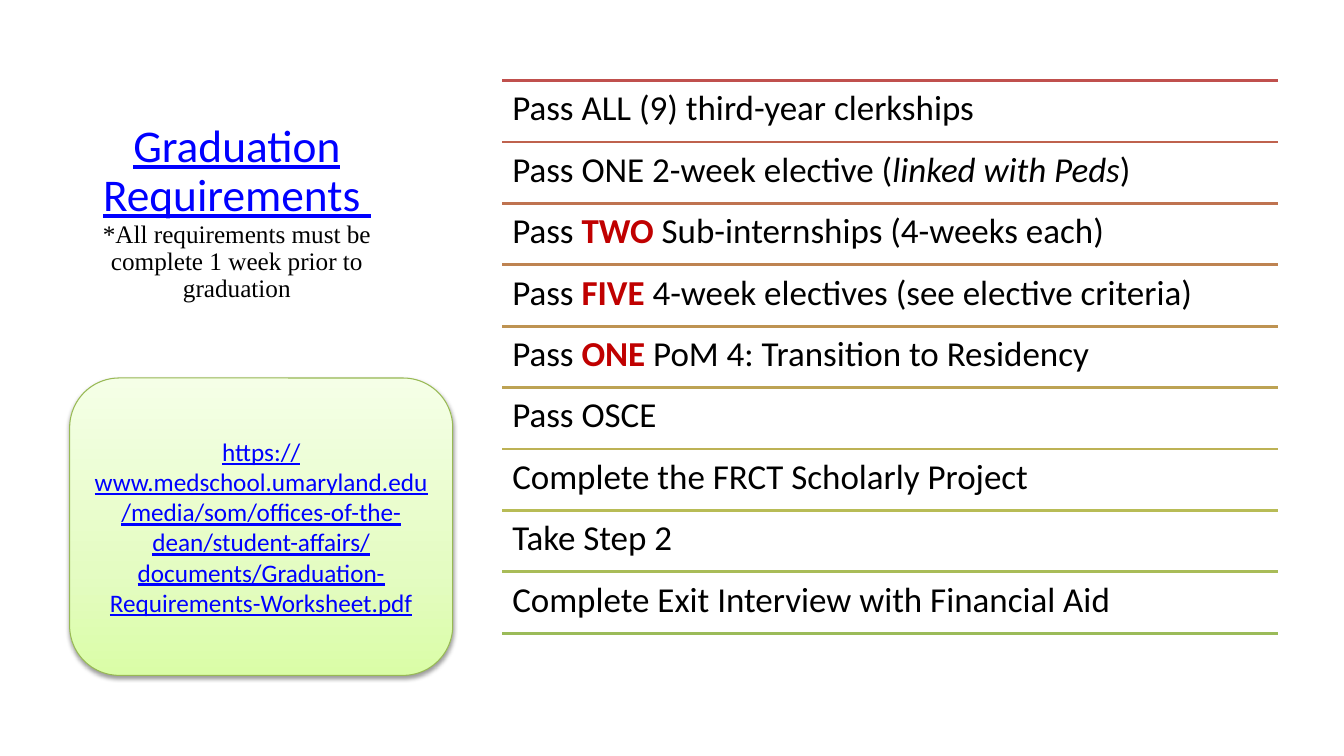
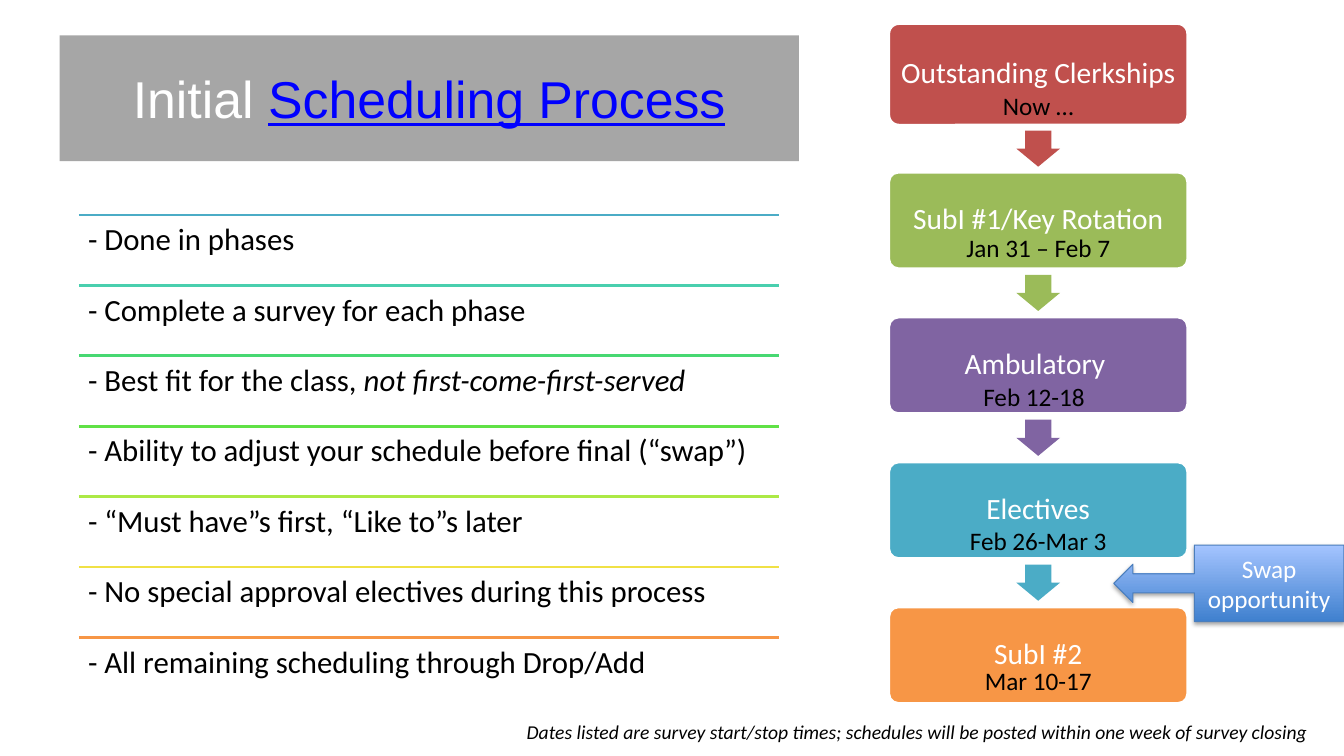
from dataclasses import dataclass
from typing import NamedTuple

from lxml import etree
from pptx import Presentation, util as u
from pptx.dml.color import RGBColor
from pptx.enum import shapes, text
from pptx.oxml import ns

COLUMNS, ROWS = 160, 90
SLIDE_WIDTH, SLIDE_HEIGHT = u.Inches(13.33), u.Inches(7.5)
TITLE_ONLY = 5


@dataclass(frozen=True)
class Theme:
    body_font: str = "Calibri"
    banner_font: str = "Arial"
    note_font: str = "Times New Roman"
    ink: str = "000000"
    paper: str = "FFFFFF"
    link: str = "0000FF"
    emphasis: str = "C00000"
    banner: str = "A6A6A6"
    red: str = "C0504D"
    green: str = "9BBB59"
    purple: str = "8064A2"
    teal: str = "4BACC6"
    orange: str = "F79646"
    card_line: str = "98B955"
    swap_line: str = "4B7EBC"
    card_stops: tuple = ((0, "DAFDA7"), (35, "E4FCC2"), (100, "F5FFE7"))
    swap_stops: tuple = ((0, "3F80CE"), (100, "A4C4FF"))
    heading_size: float = 32.4
    banner_size: float = 37
    requirement_size: float = 25
    process_size: float = 22
    step_size: float = 21
    note_size: float = 18
    footnote_size: float = 14


THEME = Theme()


class Box(NamedTuple):
    """Left, top, width and height in grid columns and rows."""
    left: float
    top: float
    width: float
    height: float

    def emu(self) -> tuple[int, int, int, int]:
        return (across(self.left), down(self.top), across(self.width), down(self.height))


class Run(NamedTuple):
    text: str
    color: str = THEME.ink
    size: float = THEME.note_size
    font: str = THEME.body_font
    bold: bool = False
    italic: bool = False
    underline: bool = False


class Item(NamedTuple):
    rule_color: str
    runs: tuple[Run, ...]


class RuledList(NamedTuple):
    left: float
    top: float
    width: float
    pitch: float
    inset: float
    size: float
    items: tuple[Item, ...]


class Step(NamedTuple):
    label: str
    dates: str
    color: str
    top: float
    height: float
    dates_drop: float
    dates_shift: float = 0


def across(columns: float) -> int:
    return round(SLIDE_WIDTH * columns / COLUMNS)


def down(rows: float) -> int:
    return round(SLIDE_HEIGHT * rows / ROWS)


def rgb(color: str) -> RGBColor:
    return RGBColor.from_string(color)


def item(rule_color: str, plain: str, marked: str = "", rest: str = "", **marks) -> Item:
    """A list entry whose middle part carries its own marks."""
    runs = (Run(plain), Run(marked, **marks), Run(rest))
    return Item(rule_color, tuple(run for run in runs if run.text))


def strong(rule_color: str, marked: str, rest: str) -> Item:
    return item(rule_color, "Pass ", marked, rest, bold=True, color=THEME.emphasis)


def write(frame, paragraphs, align=text.PP_ALIGN.CENTER, anchor=text.MSO_ANCHOR.MIDDLE,
          inset: float = 0.1, spacing: float = 1.0) -> None:
    frame_format = {"word_wrap": True, "auto_size": text.MSO_AUTO_SIZE.NONE,
                    "vertical_anchor": anchor}
    frame_format |= {f"margin_{side}": u.Inches(inset) for side in ("left", "right")}
    frame_format |= {f"margin_{side}": u.Inches(inset / 2 if anchor != text.MSO_ANCHOR.TOP
                                                else inset) for side in ("top", "bottom")}
    for name, value in frame_format.items():
        setattr(frame, name, value)
    for index, runs in enumerate(paragraphs):
        paragraph = frame.add_paragraph() if index else frame.paragraphs[0]
        paragraph.alignment = align
        paragraph.line_spacing = spacing
        for part in runs:
            run = paragraph.add_run()
            run.text = part.text
            run_format = {"name": part.font, "size": u.Pt(part.size), "bold": part.bold,
                          "italic": part.italic, "underline": part.underline}
            for name, value in run_format.items():
                setattr(run.font, name, value)
            run.font.color.rgb = rgb(part.color)


def add_label(slide, box: Box, runs, **layout) -> None:
    write(slide.shapes.add_textbox(*box.emu()).text_frame, [runs], **layout)


def add_block(slide, kind, box: Box, fill: str = "", line: str = "", line_width: float = 0.75):
    block = slide.shapes.add_shape(kind, *box.emu())
    block.shadow.inherit = False
    if fill:
        block.fill.solid()
        block.fill.fore_color.rgb = rgb(fill)
    if line:
        block.line.color.rgb = rgb(line)
        block.line.width = u.Pt(line_width)
    else:
        block.line.fill.background()
    return block


def color_node(parent, color: str):
    return etree.SubElement(parent, ns.qn("a:srgbClr"), val=color)


def add_raised_block(slide, kind, box: Box, stops, line: str, opacity: int, drop: float):
    """A block with a gradient rising from the bottom edge and a soft shadow below."""
    block = add_block(slide, kind, box, line=line)
    block.fill.background()
    properties = block.element.spPr
    gradient = etree.Element(ns.qn("a:gradFill"), rotWithShape="1")
    stop_list = etree.SubElement(gradient, ns.qn("a:gsLst"))
    for position, color in stops:
        stop = etree.SubElement(stop_list, ns.qn("a:gs"), pos=str(position * 1000))
        color_node(stop, color)
    etree.SubElement(gradient, ns.qn("a:lin"), ang=str(270 * 60000), scaled="0")
    properties.replace(properties.find(ns.qn("a:noFill")), gradient)
    shadow = etree.SubElement(
        properties.find(ns.qn("a:effectLst")), ns.qn("a:outerShdw"),
        blurRad=str(int(u.Pt(3.1))), dist=str(int(u.Pt(drop))), dir=str(90 * 60000),
        rotWithShape="0")
    etree.SubElement(color_node(shadow, THEME.ink), ns.qn("a:alpha"), val=str(opacity * 1000))
    return block


def add_rule(slide, left: float, top: float, width: float, color: str) -> None:
    rule = slide.shapes.add_connector(shapes.MSO_CONNECTOR.STRAIGHT, across(left), down(top),
                                      across(left + width), down(top))
    rule.line.color.rgb = rgb(color)
    rule.line.width = u.Pt(2)
    etree.SubElement(rule._element.spPr, ns.qn("a:effectLst"))


def add_ruled_list(slide, entries: RuledList) -> None:
    for index, entry in enumerate(entries.items):
        top = entries.top + index * entries.pitch
        add_rule(slide, entries.left, top, entries.width, entry.rule_color)
        add_label(slide, Box(entries.left, top, entries.width, entries.pitch),
                  [run._replace(size=entries.size) for run in entry.runs],
                  align=text.PP_ALIGN.LEFT, anchor=text.MSO_ANCHOR.TOP,
                  inset=entries.inset, spacing=0.9)


def add_titled_slide(deck, box: Box, paragraphs, **layout):
    slide = deck.slides.add_slide(deck.slide_layouts[TITLE_ONLY])
    title = slide.shapes.title
    title.left, title.top, title.width, title.height = box.emu()
    write(title.text_frame, paragraphs, **layout)
    return slide


REQUIREMENTS = RuledList(59.8, 9.6, 92.4, 7.31, 0.1, THEME.requirement_size, (
    item(THEME.red, "Pass ALL (9) third-year clerkships"),
    item("BF624E", "Pass ONE 2-week elective (", "linked with Peds", ")", italic=True),
    strong("BF7350", "TWO", " Sub-internships (4-weeks each)"),
    strong("BE8351", "FIVE", " 4-week electives (see elective criteria)"),
    strong("BE9352", "ONE ", "PoM 4: Transition to Residency"),
    item("BDA354", "Pass OSCE"),
    item("BDB255", "Complete the FRCT Scholarly Project"),
    item("B8BC56", "Take Step 2"),
    item("A9BC58", "Complete Exit Interview with Financial Aid"),
))

PROCESS = RuledList(9.4, 25.6, 83.3, 8.38, 0.09, THEME.process_size, (
    item(THEME.teal, "- Done in phases"),
    item("49CFAE", "- Complete a survey for each phase"),
    item("47D872", "- Best fit for the class, ", "not first-come-first-served", italic=True),
    item("60E146", "- Ability to adjust your schedule before final (“swap”)"),
    item("ACE946", "- “Must have”s first, “Like to”s later"),
    item("F0E146", "- No special approval electives during this process"),
    item(THEME.orange, "- All remaining scheduling through Drop/Add"),
))

STEP_LEFT, STEP_WIDTH, STEP_HEIGHT = 105.8, 35.6, 11.5
SECOND_STEP_TOP, STEP_PITCH = 20.5, 17.25
STEPS = (
    Step("Outstanding Clerkships", "Now …", THEME.red, 2.8, 12.1, 7.3),
    *(Step(label, dates, color, SECOND_STEP_TOP + index * STEP_PITCH, STEP_HEIGHT, drop, shift)
      for index, (label, dates, color, drop, shift) in enumerate((
          ("SubI #1/Key Rotation", "Jan 31 – Feb 7", THEME.green, 6.6, 0),
          ("Ambulatory ", "Feb 12-18", THEME.purple, 7, -0.5),
          ("Electives", "Feb 26-Mar 3", THEME.teal, 7, 0),
          ("SubI #2", "Mar 10-17", THEME.orange, 6.4, 0)))),
)


def add_step_arrow(slide, step: Step, following: Step) -> None:
    width, height = 5.2, 4.3
    middle = (step.top + step.height + following.top) / 2
    arrow = add_block(slide, shapes.MSO_SHAPE.DOWN_ARROW,
                      Box(STEP_LEFT + (STEP_WIDTH - width) / 2, middle - height / 2,
                          width, height), step.color)
    arrow.adjustments[0], arrow.adjustments[1] = 0.6, 0.5


def add_timeline(slide) -> None:
    for step in STEPS:
        card = add_block(slide, shapes.MSO_SHAPE.ROUNDED_RECTANGLE,
                         Box(STEP_LEFT, step.top, STEP_WIDTH, step.height),
                         step.color, THEME.paper, 2)
        card.adjustments[0] = 0.1
        write(card.text_frame, [[Run(step.label, THEME.paper, THEME.step_size)]],
              inset=0.08, spacing=0.9)
        add_label(slide, Box(STEP_LEFT + step.dates_shift, step.top + step.dates_drop,
                             STEP_WIDTH, 4.8), [Run(step.dates)])
    for step, following in zip(STEPS, STEPS[1:]):
        add_step_arrow(slide, step, following)


def build_requirements(deck) -> None:
    heading = Run("Graduation Requirements ", THEME.link, THEME.heading_size, underline=True)
    note = Run("*All requirements must be complete 1 week prior to graduation",
               font=THEME.note_font)
    slide = add_titled_slide(deck, Box(5.4, 9.6, 45.6, 27.1), [[heading], [note]],
                             anchor=text.MSO_ANCHOR.BOTTOM, spacing=0.9)
    add_ruled_list(slide, REQUIREMENTS)
    closing_top = REQUIREMENTS.top + len(REQUIREMENTS.items) * REQUIREMENTS.pitch
    add_rule(slide, REQUIREMENTS.left, closing_top, REQUIREMENTS.width, THEME.green)
    worksheet = add_raised_block(slide, shapes.MSO_SHAPE.ROUNDED_RECTANGLE,
                                 Box(8.3, 45, 45.6, 35.4), THEME.card_stops,
                                 THEME.card_line, opacity=38, drop=1.6)
    address = ("https://www.medschool.umaryland.edu/media/som/offices-of-the-dean/"
               "student-affairs/documents/Graduation-Requirements-Worksheet.pdf")
    write(worksheet.text_frame, [[Run(address, THEME.link, underline=True)]])


def build_scheduling(deck) -> None:
    banner = Run("Initial ", THEME.paper, THEME.banner_size, THEME.banner_font)
    linked = banner._replace(text="Scheduling Process", color=THEME.link, underline=True)
    slide = add_titled_slide(deck, Box(7.1, 4.2, 88, 15), [[banner, linked]])
    slide.shapes.title.fill.solid()
    slide.shapes.title.fill.fore_color.rgb = rgb(THEME.banner)
    add_ruled_list(slide, PROCESS)
    add_timeline(slide)
    footnote = ("Dates listed are survey start/stop times; "
                "schedules will be posted within one week of survey closing")
    add_label(slide, Box(59.2, 85.1, 100, 4.1),
              [Run(footnote, size=THEME.footnote_size, italic=True)])
    swap = add_raised_block(slide, shapes.MSO_SHAPE.LEFT_ARROW_CALLOUT,
                            Box(132.6, 64.9, 27.4, 9.1), THEME.swap_stops,
                            THEME.swap_line, opacity=35, drop=1.8)
    write(swap.text_frame, [[Run("Swap opportunity", THEME.paper)]])


def main() -> None:
    deck = Presentation()
    deck.slide_width, deck.slide_height = SLIDE_WIDTH, SLIDE_HEIGHT
    build_requirements(deck)
    build_scheduling(deck)
    deck.save("out.pptx")


if __name__ == "__main__":
    main()
